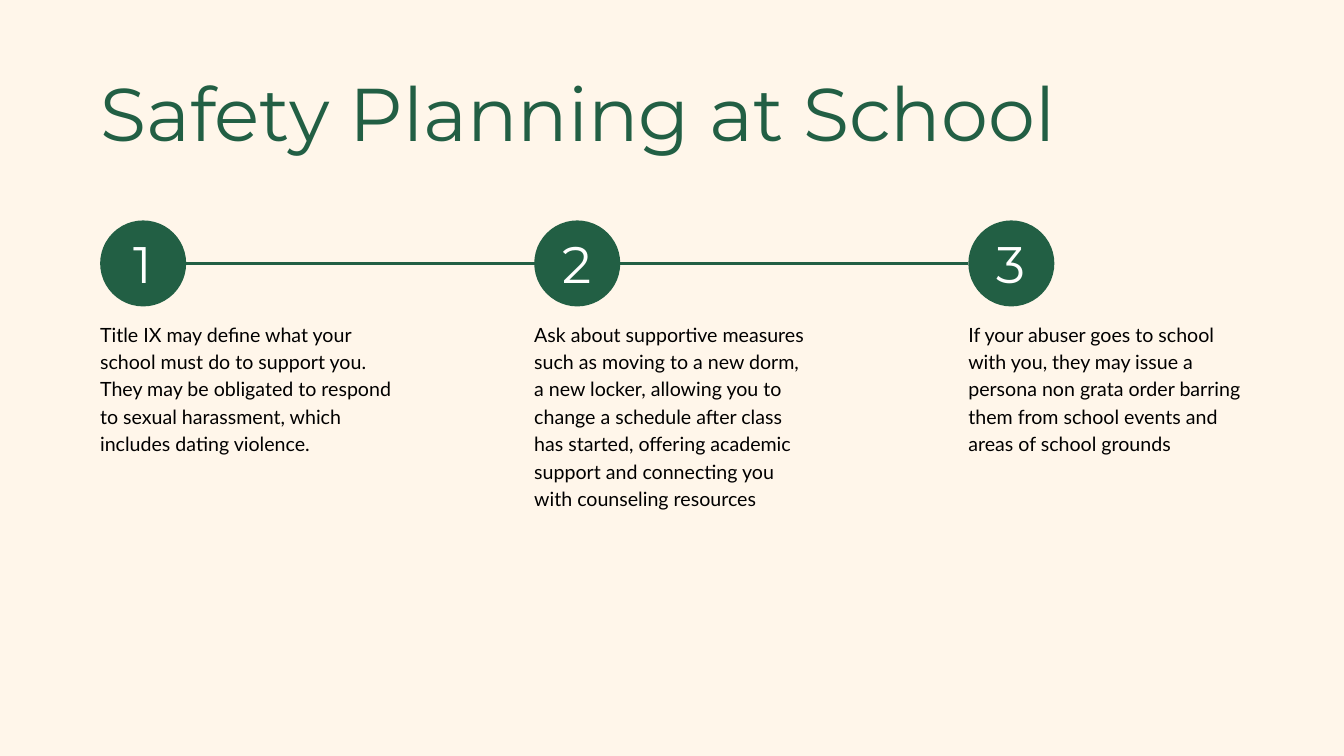
from lxml.etree import SubElement
from pptx import Presentation
from pptx.dml.color import RGBColor
from pptx.enum.shapes import MSO_CONNECTOR, MSO_SHAPE
from pptx.enum.text import MSO_ANCHOR as ANCHOR, MSO_AUTO_SIZE as AUTO, PP_ALIGN as ALIGN
from pptx.oxml.ns import qn
from pptx.util import Inches, Pt

CREAM, GREEN, BLACK, WHITE = "FFF6EA", "225F44", "000000", "FFFFFF"
HEADING, BODY = "Montserrat", "Lato"
LEFT, PITCH = 1.49, 6.46
CIRCLE_TOP, DIAMETER = 3.28, 1.28
STEP_TOP = 4.74

# step text, box width, box height
STEPS = [
    ("Title IX may define what your school must do to support you. They may be "
     "obligated to respond to sexual harassment, which includes dating violence.",
     4.37, 2.81),
    ("Ask about supportive measures such as moving to a new dorm, a new locker, "
     "allowing you to change a schedule after class has started, offering academic "
     "support and connecting you with counseling resources",
     4.11, 4.03),
    ("If your abuser goes to school with you, they may issue a persona non grata "
     "order barring them from school events and areas of school grounds",
     4.11, 2.81),
]


def color(hex_string):
    return RGBColor.from_string(hex_string)


def write(sp, text, font=BODY, size=21, fill=BLACK, leading=29.4,
          align=ALIGN.LEFT, anchor=ANCHOR.TOP, wrap=True):
    """Put one formatted paragraph in a shape, without margins."""
    tf = sp.text_frame
    tf.auto_size = AUTO.NONE
    tf.word_wrap = wrap
    tf.vertical_anchor = anchor
    tf.margin_left = tf.margin_top = tf.margin_right = tf.margin_bottom = 0
    p = tf.paragraphs[0]
    p.alignment = align
    p.line_spacing = Pt(leading)
    r = p.add_run()
    r.text = text
    r.font.name = font
    r.font.size = Pt(size)
    r.font.color.rgb = color(fill)


class TimelineSlide:
    def __init__(self, prs):
        self.s = prs.slides.add_slide(prs.slide_layouts[5])
        self.s.background.fill.solid()
        self.s.background.fill.fore_color.rgb = color(CREAM)

    def title(self, text, x, y, w, h):
        sp = self.s.shapes.title
        sp.left, sp.top, sp.width, sp.height = map(Inches, (x, y, w, h))
        write(sp, text, font=HEADING, size=80, fill=GREEN, leading=60)

    def line(self, x1, x2, y):
        sp = self.s.shapes.add_connector(
            MSO_CONNECTOR.STRAIGHT, Inches(x1), Inches(y), Inches(x2), Inches(y))
        sp.line.color.rgb = color(GREEN)
        sp.line.width = Pt(4)
        SubElement(sp._element.spPr, qn("a:effectLst"))

    def numbered_circle(self, number, x, y):
        sp = self.s.shapes.add_shape(
            MSO_SHAPE.OVAL, Inches(x), Inches(y), Inches(DIAMETER), Inches(DIAMETER))
        sp.shadow.inherit = False
        sp.fill.solid()
        sp.fill.fore_color.rgb = color(GREEN)
        sp.line.fill.background()
        write(sp, str(number), font=HEADING, size=55, fill=WHITE, leading=65.9,
              align=ALIGN.CENTER, anchor=ANCHOR.MIDDLE, wrap=False)

    def step_text(self, text, x, y, w, h):
        sp = self.s.shapes.add_textbox(Inches(x), Inches(y), Inches(w), Inches(h))
        write(sp, text)


def main():
    prs = Presentation()
    prs.slide_width, prs.slide_height = Inches(20), Inches(11.25)

    slide = TimelineSlide(prs)
    slide.title("Safety Planning at School", LEFT, 1.5, 15.68, 0.91)
    last_x = LEFT + PITCH * (len(STEPS) - 1)
    slide.line(LEFT + DIAMETER - 0.1, last_x, CIRCLE_TOP + DIAMETER / 2)
    for i, (text, width, height) in enumerate(STEPS):
        x = LEFT + i * PITCH
        slide.numbered_circle(i + 1, x, CIRCLE_TOP)
        slide.step_text(text, x, STEP_TOP, width, height)

    prs.save("out.pptx")


if __name__ == "__main__":
    main()
